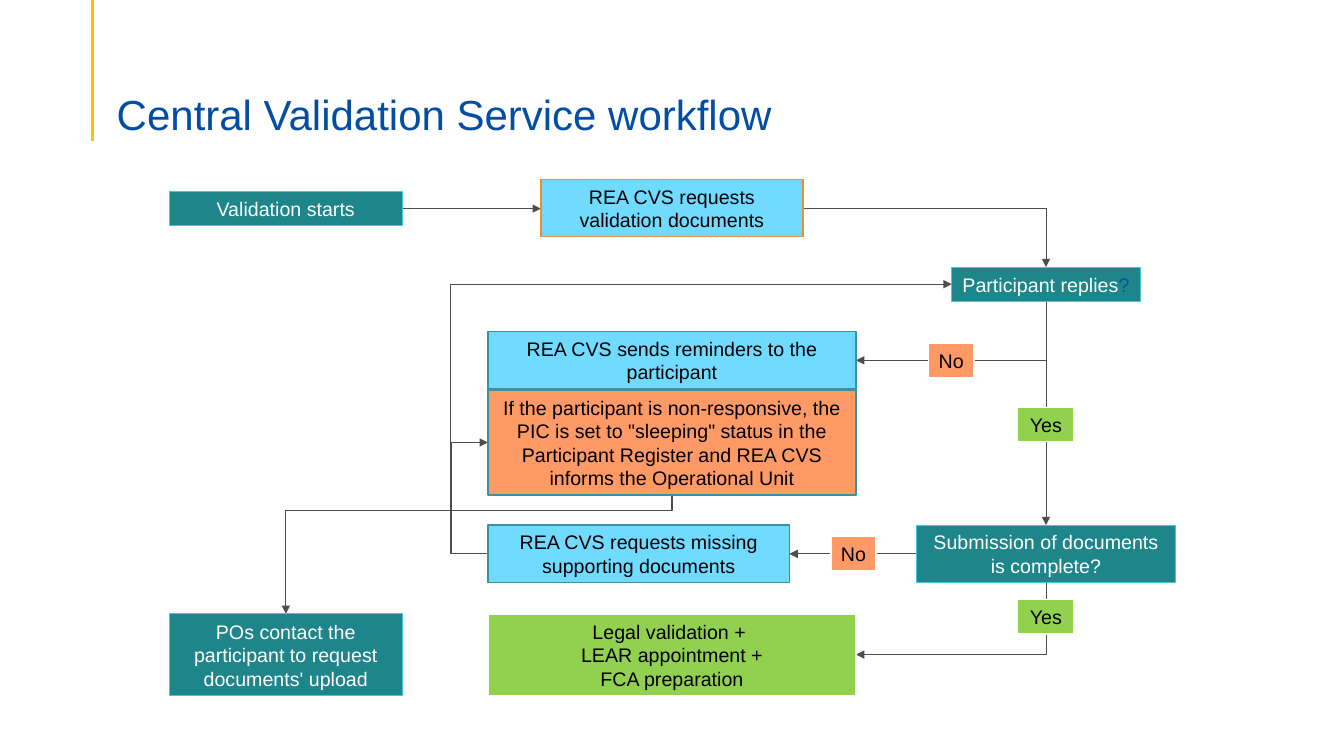
from dataclasses import dataclass

from pptx import Presentation
from pptx.dml.color import RGBColor
from pptx.enum.shapes import MSO_CONNECTOR as CONN, MSO_SHAPE as SHAPE
from pptx.enum.text import MSO_ANCHOR as ANCHOR, PP_ALIGN as ALIGN
from pptx.oxml.ns import qn
from pptx.util import Inches, Pt
from lxml.etree import SubElement

FONT = "Arial"
BLUE = RGBColor(0x03, 0x4E, 0xA2)
DARK_BLUE = RGBColor(0x0F, 0x54, 0x94)
YELLOW = RGBColor(0xFF, 0xC0, 0x00)
TEAL = RGBColor(0x1E, 0x85, 0x8B)
CYAN = RGBColor(0x4B, 0xC5, 0xDE)
SKY = RGBColor(0x71, 0xDA, 0xFF)
STEEL = RGBColor(0x37, 0x92, 0xA4)
AMBER = RGBColor(0xED, 0x8D, 0x2F)
ORANGE = RGBColor(0xFF, 0x99, 0x66)
GREEN = RGBColor(0x92, 0xD0, 0x50)
GREY = RGBColor(0x4D, 0x4D, 0x4D)
BLACK = RGBColor(0, 0, 0)
WHITE = RGBColor(0xFF, 0xFF, 0xFF)

# Style: fill, line colour, line width, text colour
STEP = (TEAL, CYAN, 0.75, WHITE)
REQUEST = (SKY, AMBER, 1, BLACK)
ACTION = (SKY, STEEL, 1, BLACK)
WARNING = (ORANGE, STEEL, 1, BLACK)
POSITIVE = (GREEN, WHITE, 1, BLACK)
NEGATIVE = (ORANGE, WHITE, 1, BLACK)


@dataclass
class Box:
    cx: float
    top: float
    w: float
    h: float

    @property
    def left(self):
        return self.cx - self.w / 2

    @property
    def right(self):
        return self.cx + self.w / 2

    @property
    def cy(self):
        return self.top + self.h / 2

    @property
    def bottom(self):
        return self.top + self.h


def add_run(p, text, size, color):
    r = p.add_run()
    r.text = text
    r.font.name, r.font.size = FONT, Pt(size)
    r.font.color.rgb = color


def add_line(s, start, end, color=GREY, width=0.75, arrow=None,
             preset="line", adj=None, turn=0):
    """Straight or bent connector; arrow is headEnd (start) or tailEnd (end)."""
    kind = CONN.STRAIGHT if preset == "line" else CONN.ELBOW
    c = s.shapes.add_connector(kind, *map(Inches, start + end))
    c.line.color.rgb, c.line.width = color, Pt(width)
    pr = c._element.spPr
    geom = pr.find(qn("a:prstGeom"))
    geom.set("prst", preset)
    if adj is not None:
        guides = geom.find(qn("a:avLst"))
        if guides is None:
            guides = SubElement(geom, qn("a:avLst"))
        SubElement(guides, qn("a:gd"), name="adj1", fmla=f"val {round(adj * 100000)}")
    if turn:
        pr.find(qn("a:xfrm")).set("rot", str(turn * 60000))
    if arrow:
        SubElement(pr.find(qn("a:ln")), qn(f"a:{arrow}"), type="triangle")
    SubElement(pr, qn("a:effectLst"))


def add_box(s, box, style, *lines, wrap=True):
    fill, line, width, color = style
    sp = s.shapes.add_shape(SHAPE.RECTANGLE,
                            *map(Inches, (box.left, box.top, box.w, box.h)))
    sp.shadow.inherit = False
    sp.fill.solid()
    sp.fill.fore_color.rgb = fill
    sp.line.color.rgb, sp.line.width = line, Pt(width)
    tf = sp.text_frame
    tf.word_wrap, tf.vertical_anchor = wrap, ANCHOR.MIDDLE
    for i, text in enumerate(lines):
        p = tf.paragraphs[0] if i == 0 else tf.add_paragraph()
        p.alignment = ALIGN.CENTER
        add_run(p, text, 14, color)
    return tf.paragraphs[-1]


def title_bar(s, x, y):
    # Yellow rule with the title to its right
    add_line(s, (x, y), (x, y + 1.4), YELLOW, 2.25)
    tf = s.shapes.add_textbox(*map(Inches, (x + 0.14, y + 0.53, 11.5, 0.86))).text_frame
    tf.word_wrap, tf.vertical_anchor, tf.margin_bottom = True, ANCHOR.BOTTOM, 0
    p = tf.paragraphs[0]
    p.line_spacing = 0.9
    add_run(p, "Central Validation Service workflow", 30, BLUE)


def flowchart(s, x, y):
    # Three columns, given by their centres
    left, mid, right = x + 1.155, x + 4.985, x + 8.695
    start = Box(left, y + 0.12, 2.31, 0.34)
    request = Box(mid, y, 2.6, 0.57)
    replies = Box(right, y + 0.87, 1.87, 0.34)
    reminders = Box(mid, y + 1.51, 3.65, 0.57)
    sleeping = Box(mid, y + 2.09, 3.65, 1.04)
    missing = Box(mid - 0.33, y + 3.43, 2.99, 0.57)
    complete = Box(right, y + 3.43, 2.56, 0.57)
    contact = Box(left, y + 4.31, 2.31, 0.81)
    legal = Box(mid, y + 4.31, 3.65, 0.81)

    # Straight arrows
    add_line(s, (start.right, start.cy), (request.left, start.cy), arrow="tailEnd")
    add_line(s, (right, replies.bottom), (right, complete.top), arrow="tailEnd")
    add_line(s, (complete.left, complete.cy), (missing.right, missing.cy), arrow="tailEnd")

    # Arrows with one corner in the right column
    add_line(s, (request.right, start.cy), (right, replies.top),
             arrow="tailEnd", preset="bentConnector2")
    for target, source in ((reminders, replies), (legal, complete)):
        add_line(s, (target.right, target.cy), (right, source.bottom),
                 arrow="headEnd", preset="bentConnector2")

    # Loops back from the missing documents, sharing one lane
    lane = missing.left - 0.37
    for begin, target in ((missing.left, replies), (missing.left + 0.01, sleeping)):
        add_line(s, (begin, missing.cy), (target.left, target.cy), arrow="tailEnd",
                 preset="bentConnector3", adj=(lane - begin) / (target.left - begin))

    # Down, left and down again: a quarter-turned connector about its centre
    drop, run = contact.top - sleeping.bottom, mid - left
    cx, cy = (mid + left) / 2, (sleeping.bottom + contact.top) / 2
    add_line(s, (cx - drop / 2, cy - run / 2), (cx + drop / 2, cy + run / 2),
             arrow="tailEnd", preset="bentConnector3", adj=0.13, turn=90)

    # Steps
    add_box(s, start, STEP, "Validation starts")
    add_box(s, request, REQUEST, "REA CVS requests", "validation documents")
    p = add_box(s, replies, STEP, "Participant replies", wrap=False)
    add_run(p, "?", 14, DARK_BLUE)
    add_box(s, reminders, ACTION, "REA CVS sends reminders to the participant")
    add_box(s, sleeping, WARNING,
            'If the participant is non-responsive, the PIC is set to "sleeping" status '
            "in the Participant Register and REA CVS informs the Operational Unit")
    add_box(s, missing, ACTION, "REA CVS requests missing supporting documents")
    add_box(s, complete, STEP, "Submission of documents is complete?")
    add_box(s, contact, STEP, "POs contact the participant to request documents' upload")
    add_box(s, legal, POSITIVE, "Legal validation + ", "LEAR appointment +", "FCA preparation")

    # Answers on the arrows
    for top in (y + 2.26, y + 4.17):
        add_box(s, Box(right, top, 0.56, 0.34), POSITIVE, "Yes", wrap=False)
    for cx, row in ((right - 0.94, reminders), (right - 1.91, missing)):
        add_box(s, Box(cx, row.cy - 0.17, 0.45, 0.34), NEGATIVE, "No", wrap=False)


def main():
    prs = Presentation()
    prs.slide_width, prs.slide_height = Inches(13.33), Inches(7.5)
    s = prs.slides.add_slide(prs.slide_layouts[6])
    title_bar(s, 0.92, 0)
    flowchart(s, 1.68, 1.78)
    prs.save("out.pptx")


if __name__ == "__main__":
    main()
